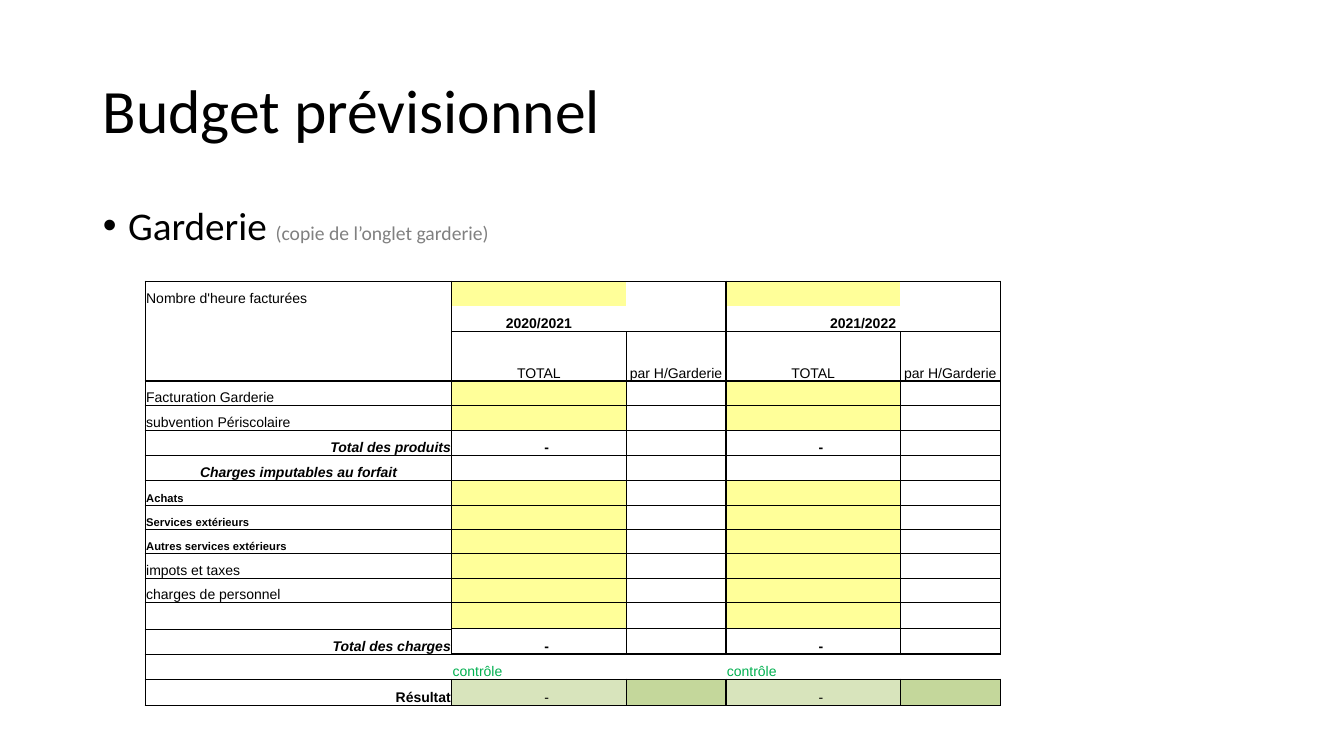
from lxml import etree
from pptx import Presentation
from pptx import util as u
from pptx.dml.color import RGBColor
from pptx.enum import text
from pptx.oxml.ns import qn

BLACK = RGBColor(0x00, 0x00, 0x00)
GREY = RGBColor(0x80, 0x80, 0x80)
GREEN = RGBColor(0x00, 0xB0, 0x50)
YELLOW = RGBColor(0xFF, 0xFF, 0x99)
LIGHT_OLIVE = RGBColor(0xD8, 0xE4, 0xBC)
OLIVE = RGBColor(0xC4, 0xD7, 0x9B)

LEFT, CENTER, RIGHT = text.PP_ALIGN.LEFT, text.PP_ALIGN.CENTER, text.PP_ALIGN.RIGHT
NO_STYLE = "{2D5ABB26-0587-4C30-8999-92F81FD0307C}"
DASH_INDENT = 0.92

COLUMN_WIDTHS = [3.04, 1.73, 0.99, 1.73, 0.99]
ROW_HEIGHTS = [0.25, 0.25, 0.49, 0.24, 0.25, 0.25, 0.25, 0.24,
               0.24, 0.24, 0.25, 0.24, 0.26, 0.25, 0.25, 0.26]
YEARS_ROW, HEADER_ROW, CHECK_ROW, RESULT_ROW = 1, 2, 14, 15
INPUT_ROWS = {0, 3, 4, 7, 8, 9, 10, 11, 12}
TOTAL_ROWS = {5, 13}
HEAVY_LINES = {0, 3, 5, 6, 13, 14, 15, 16}
HEAVY_LABEL_LINES = {0, 3, 6, 16}

PLAIN = dict()
TOTAL = dict(bold=True, italic=True, align=RIGHT)
SMALL = dict(bold=True, size=8)
LABELS = {
    0: ("Nombre d'heure facturées", PLAIN),
    3: ("Facturation Garderie", PLAIN),
    4: ("subvention Périscolaire", PLAIN),
    5: ("Total des produits", TOTAL),
    6: ("Charges imputables au forfait", dict(bold=True, italic=True, align=CENTER)),
    7: ("Achats", SMALL),
    8: ("Services extérieurs", SMALL),
    9: ("Autres services extérieurs", SMALL),
    10: ("impots et taxes", PLAIN),
    11: ("charges de personnel", PLAIN),
    13: ("Total des charges", TOTAL),
    15: ("Résultat", dict(bold=True, align=RIGHT)),
}


def vertical_width(row, line):
    if row == CHECK_ROW:
        return 1 if line == 0 else 0
    if line in (2, 4):
        return 0 if row < HEADER_ROW else 0.5
    return 1


def horizontal_width(line, column):
    if line == 1 or (line == 2 and column == 0):
        return 0
    heavy = HEAVY_LABEL_LINES if column == 0 else HEAVY_LINES
    return 1 if line in heavy else 0.5


def cell_content(row, column):
    if column == 0:
        return LABELS.get(row, ("", PLAIN))
    amount = column in (1, 3)
    if row == HEADER_ROW:
        return ("TOTAL" if amount else "par H/Garderie"), dict(align=CENTER)
    if not amount:
        return "", PLAIN
    if row == YEARS_ROW:
        return ("2020/2021" if column == 1 else "2021/2022"), dict(bold=True, align=CENTER)
    if row in TOTAL_ROWS or row == RESULT_ROW:
        return "-", dict(bold=row in TOTAL_ROWS, indent=DASH_INDENT)
    if row == CHECK_ROW:
        return "contrôle", dict(color=GREEN)
    return "", PLAIN


def cell_fill(row, column):
    if column == 0:
        return None
    amount = column in (1, 3)
    if row == RESULT_ROW:
        return LIGHT_OLIVE if amount else OLIVE
    return YELLOW if amount and row in INPUT_ROWS else None


class BudgetSlide:
    heading_font = "Calibri"
    table_font = "Arial"

    def __init__(self, presentation):
        self.slide = presentation.slides.add_slide(presentation.slide_layouts[1])

    def place(self, shape, left, top, width, height):
        shape.left, shape.top = u.Inches(left), u.Inches(top)
        shape.width, shape.height = u.Inches(width), u.Inches(height)
        shape.text_frame.auto_size = text.MSO_AUTO_SIZE.NONE
        shape.text_frame.word_wrap = True
        paragraph = shape.text_frame.paragraphs[0]
        paragraph.alignment = LEFT
        paragraph.line_spacing = 0.9
        return paragraph

    def style_font(self, font, name, size, color, bold=False, italic=False):
        font.name, font.size = name, u.Pt(size)
        font.bold, font.italic = bold, italic
        font.color.rgb = color

    def title(self, words, *box):
        shape = self.slide.shapes.title
        paragraph = self.place(shape, *box)
        shape.text_frame.vertical_anchor = text.MSO_ANCHOR.MIDDLE
        paragraph.add_run().text = words
        self.style_font(paragraph.font, self.heading_font, 44, BLACK)

    def bullet(self, runs, *box):
        paragraph = self.place(self.slide.placeholders[1], *box)
        paragraph.space_before = u.Pt(10)
        properties = paragraph._p.get_or_add_pPr()
        properties.set("marL", str(u.Inches(0.25)))
        properties.set("indent", str(-u.Inches(0.25)))
        for words, size, color in runs:
            run = paragraph.add_run()
            run.text = words
            self.style_font(run.font, self.heading_font, size, color)

    def border(self, cell, side, width):
        line = etree.SubElement(cell._tc.get_or_add_tcPr(), qn("a:ln" + side))
        line.set("w", str(u.Pt(width)))
        if width:
            fill = etree.SubElement(line, qn("a:solidFill"))
            etree.SubElement(fill, qn("a:srgbClr")).set("val", str(BLACK))
        else:
            etree.SubElement(line, qn("a:noFill"))

    def cell_text(self, cell, words, size=10, bold=False, italic=False,
                  align=LEFT, color=BLACK, indent=0.01):
        cell.margin_left = u.Inches(indent)
        cell.margin_right = cell.margin_top = u.Inches(0.01)
        cell.margin_bottom = 0
        cell.vertical_anchor = text.MSO_ANCHOR.BOTTOM
        paragraph = cell.text_frame.paragraphs[0]
        paragraph.alignment = align
        self.style_font(paragraph.font, self.table_font, size, color, bold, italic)
        if words:
            paragraph.add_run().text = words
        else:
            etree.SubElement(paragraph._p, qn("a:endParaRPr")).set("sz", str(size * 100))

    def budget_table(self, left, top):
        frame = self.slide.shapes.add_table(
            len(ROW_HEIGHTS), len(COLUMN_WIDTHS), u.Inches(left), u.Inches(top),
            u.Inches(sum(COLUMN_WIDTHS)), u.Inches(sum(ROW_HEIGHTS)))
        table = frame.table
        table.first_row = table.horz_banding = False
        table._tbl.tblPr.find(qn("a:tableStyleId")).text = NO_STYLE
        for column, width in zip(table.columns, COLUMN_WIDTHS):
            column.width = u.Inches(width)
        for row, height in zip(table.rows, ROW_HEIGHTS):
            row.height = u.Inches(height)
        table.cell(YEARS_ROW, 3).merge(table.cell(YEARS_ROW, 4))
        for row in range(len(ROW_HEIGHTS)):
            for column in range(len(COLUMN_WIDTHS)):
                cell = table.cell(row, column)
                span = cell.span_width if cell.is_merge_origin else 1
                self.border(cell, "L", vertical_width(row, column))
                self.border(cell, "R", vertical_width(row, column + span))
                self.border(cell, "T", horizontal_width(row, column))
                self.border(cell, "B", horizontal_width(row + 1, column))
                color = cell_fill(row, column)
                if color is None:
                    cell.fill.background()
                else:
                    cell.fill.solid()
                    cell.fill.fore_color.rgb = color
                words, style = cell_content(row, column)
                self.cell_text(cell, words, **style)


def main():
    presentation = Presentation()
    presentation.slide_width = u.Inches(13.33)
    presentation.slide_height = u.Inches(7.5)
    budget = BudgetSlide(presentation)
    budget.title("Budget prévisionnel", 0.92, 0.4, 11.5, 1.45)
    budget.bullet([("Garderie ", 28, BLACK), ("(copie de l’onglet garderie)", 14, GREY)],
                  0.92, 2, 11.5, 4.76)
    budget.budget_table(1.44, 2.79)
    presentation.save("out.pptx")


if __name__ == "__main__":
    main()
